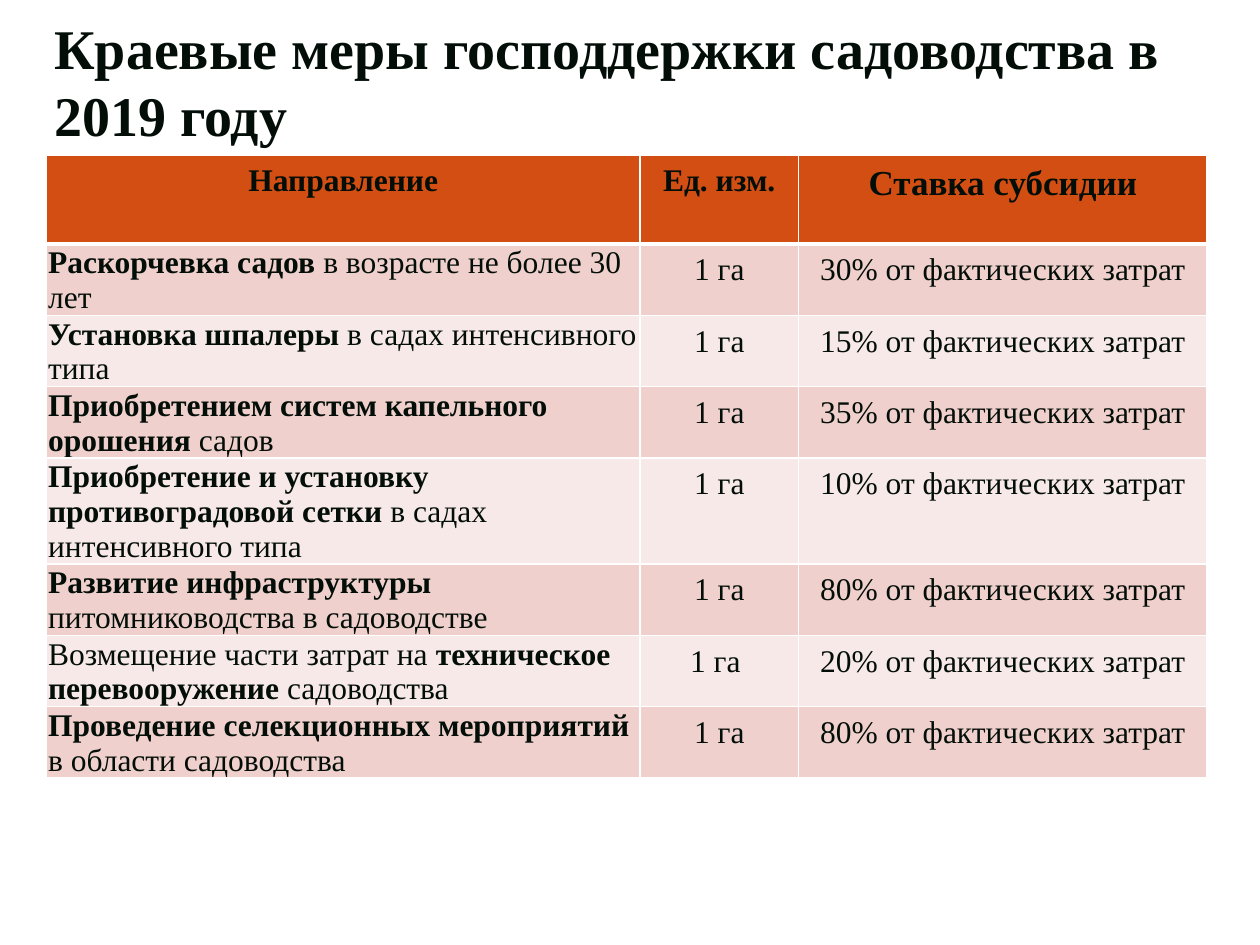
from dataclasses import dataclass

from lxml.etree import SubElement
from pptx import Presentation
from pptx.dml.color import RGBColor
from pptx.enum.text import MSO_ANCHOR as Anchor, MSO_AUTO_SIZE as AutoSize, PP_ALIGN as Align
from pptx.oxml.ns import qn
from pptx.util import Cm, Pt

INK = RGBColor(0x04, 0x0E, 0x08)
WHITE = RGBColor(0xFF, 0xFF, 0xFF)
HEADER_FILL = RGBColor(0xD3, 0x4E, 0x13)
BAND_FILLS = (RGBColor(0xEF, 0xD0, 0xCC), RGBColor(0xF7, 0xE9, 0xE7))

FONT_FORMAT = {"name": "Times New Roman", "size": Pt(18), "bold": False}
MEASURE_MARGINS = {
    "margin_left": Cm(0.03), "margin_top": Cm(0.03),
    "margin_right": Cm(0.03), "margin_bottom": Cm(0),
}
COLUMN_WIDTHS = (Cm(11.96), Cm(3.2), Cm(8.23))
HEADER_HEIGHT, ROW_HEIGHT = Cm(1.8), Cm(1.4)


@dataclass
class Span:
    text: str
    bold: bool = False
    size: int = 18


@dataclass
class Measure:
    spans: list[Span]
    rate: int
    unit: str = "1 га"


HEADINGS = (
    Span("Направление", True),
    Span("Ед. изм.", True),
    Span("Ставка субсидии", True, 20),
)
MEASURES = (
    Measure([Span("Раскорчевка садов ", True), Span("в возрасте не более 30 лет")], 30),
    Measure([Span("Установка шпалеры ", True), Span("в садах интенсивного типа")], 15),
    Measure([Span("Приобретением систем капельного орошения ", True), Span("садов")], 35),
    Measure([Span("Приобретение и установку противоградовой сетки", True),
             Span(" в садах интенсивного типа")], 10),
    Measure([Span("Развитие инфраструктуры ", True), Span("питомниководства в садоводстве")], 80),
    Measure([Span("Возмещение части затрат на "), Span("техническое перевооружение ", True),
             Span("садоводства")], 20, "1 га "),
    Measure([Span("Проведение селекционных мероприятий", True),
             Span(" в области садоводства")], 80),
)


def apply_format(target, values: dict) -> None:
    for name, value in values.items():
        setattr(target, name, value)


def write_spans(para, spans: list[Span]) -> None:
    for span in spans:
        run = para.add_run()
        run.text = span.text
        apply_format(run.font, FONT_FORMAT | {"bold": span.bold, "size": Pt(span.size)})
        run.font.color.rgb = INK


def set_borders(cell, top: float, bottom: float) -> None:
    properties = cell._tc.get_or_add_tcPr()
    for side, width in {"lnL": 1, "lnR": 1, "lnT": top, "lnB": bottom}.items():
        line = SubElement(properties, qn(f"a:{side}"), w=str(Pt(width)))
        fill = SubElement(line, qn("a:solidFill"))
        SubElement(fill, qn("a:srgbClr"), val=str(WHITE))


def fill_cell(cell, spans: list[Span], fill: RGBColor, top: float = 1, bottom: float = 1,
              centred: bool = True) -> None:
    set_borders(cell, top, bottom)
    cell.fill.solid()
    cell.fill.fore_color.rgb = fill
    para = cell.text_frame.paragraphs[0]
    if centred:
        apply_format(para, {"alignment": Align.CENTER, "line_spacing": 1.07})
    else:
        apply_format(cell, MEASURE_MARGINS | {"vertical_anchor": Anchor.MIDDLE})
    write_spans(para, spans)


def add_title(page, text: str) -> None:
    box = page.shapes.title
    apply_format(box, {"left": Cm(0.84), "top": Cm(0.64), "width": Cm(24.05), "height": Cm(1.98)})
    apply_format(box.text_frame, {"word_wrap": True, "auto_size": AutoSize.NONE,
                                  "vertical_anchor": Anchor.MIDDLE})
    para = box.text_frame.paragraphs[0]
    para.alignment = Align.LEFT
    write_spans(para, [Span(text, True, 32)])


def add_measures_table(page) -> None:
    height = HEADER_HEIGHT + ROW_HEIGHT * len(MEASURES)
    table = page.shapes.add_table(len(MEASURES) + 1, len(COLUMN_WIDTHS), Cm(0.94), Cm(3.12),
                                  sum(COLUMN_WIDTHS), height).table
    for column, width in zip(table.columns, COLUMN_WIDTHS):
        column.width = width
    for index, row in enumerate(table.rows):
        row.height = ROW_HEIGHT if index else HEADER_HEIGHT

    # Header row with a heavy rule below
    for column, heading in enumerate(HEADINGS):
        fill_cell(table.cell(0, column), [heading], HEADER_FILL, bottom=3)

    # Banded rows, one per measure
    for row, measure in enumerate(MEASURES, start=1):
        fill = BAND_FILLS[(row - 1) % 2]
        top = 3 if row == 1 else 1
        rate = Span(f"{measure.rate}% от фактических затрат")
        fill_cell(table.cell(row, 0), measure.spans, fill, top, centred=False)
        fill_cell(table.cell(row, 1), [Span(measure.unit)], fill, top)
        fill_cell(table.cell(row, 2), [rate], fill, top)


def main() -> None:
    deck = Presentation()
    deck.slide_width, deck.slide_height = Cm(25.4), Cm(19.05)
    page = deck.slides.add_slide(deck.slide_layouts[5])
    add_title(page, "Краевые меры господдержки садоводства в 2019 году")
    add_measures_table(page)
    deck.save("out.pptx")


if __name__ == "__main__":
    main()
